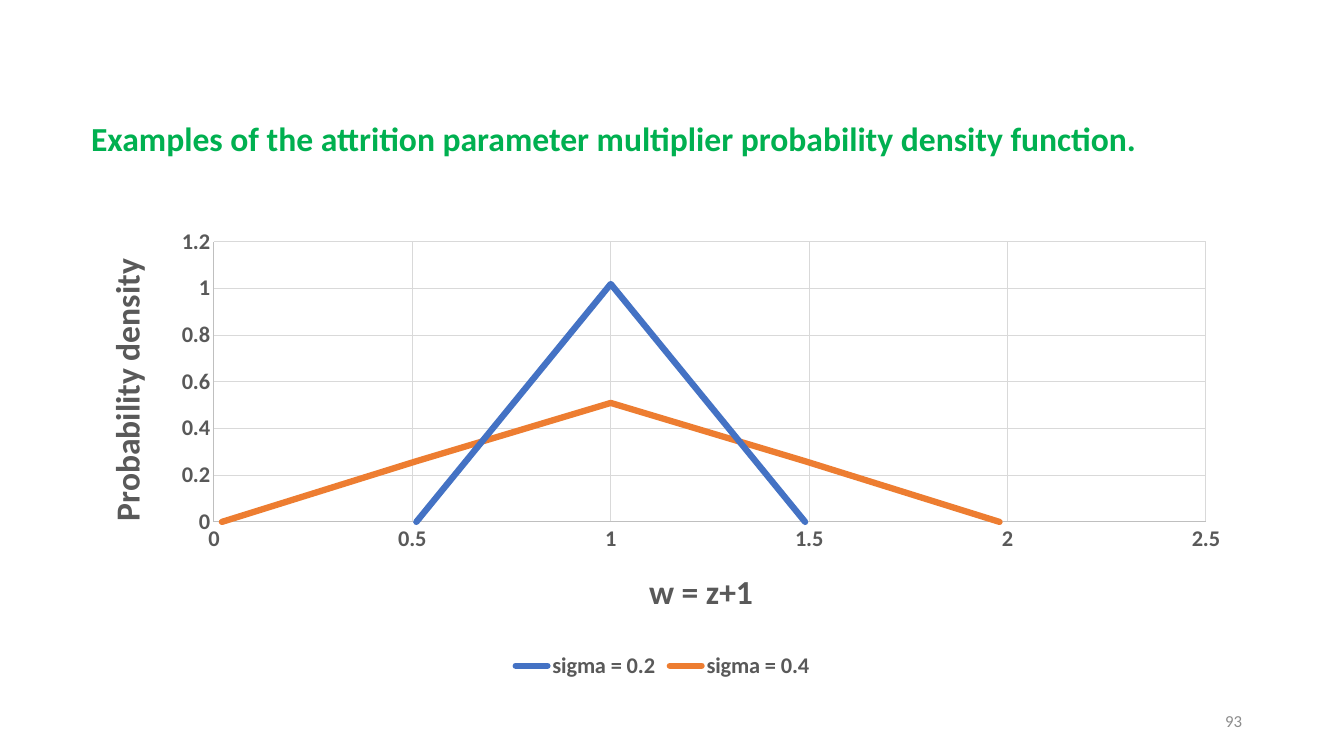
from lxml.etree import SubElement
from pptx import Presentation
from pptx.chart.data import XyChartData
from pptx.dml.color import RGBColor
from pptx.enum.chart import XL_CHART_TYPE, XL_LEGEND_POSITION, XL_TICK_MARK
from pptx.enum.text import MSO_ANCHOR, PP_ALIGN
from pptx.oxml.ns import qn
from pptx.util import Emu, Pt

GREEN = RGBColor(0x00, 0xB0, 0x50)
BLUE = RGBColor(0x44, 0x72, 0xC4)
ORANGE = RGBColor(0xED, 0x7D, 0x31)
TEXT_GRAY = RGBColor(0x59, 0x59, 0x59)
NUMBER_GRAY = RGBColor(0x8C, 0x8C, 0x8C)
AXIS_GRAY = RGBColor(0xBF, 0xBF, 0xBF)
GRID_GRAY = RGBColor(0xD9, 0xD9, 0xD9)

CHART_WIDTH, CHART_HEIGHT = 1163, 465
MULTIPLIERS = [0.02, 0.51, 1, 1.49, 1.98]
DENSITIES = [
    ("sigma = 0.2", BLUE, [None, 0, 1.02, 0, None]),
    ("sigma = 0.4", ORANGE, [0, 0.26, 0.51, 0.26, 0]),
]


def px(count):
    return Emu(round(count * 914400 / 100.8))


def place(holder, **lengths):
    """Give a chart part a manual layout, in px from the chart's corner."""
    for old in holder.findall(qn("c:layout")):
        holder.remove(old)
    layout = SubElement(holder, qn("c:layout"))
    manual = SubElement(layout, qn("c:manualLayout"))
    if "w" in lengths:
        SubElement(manual, qn("c:layoutTarget")).set("val", "inner")
    for side in ("x", "y"):
        SubElement(manual, qn(f"c:{side}Mode")).set("val", "edge")
    for side, length in lengths.items():
        whole = CHART_WIDTH if side in "xw" else CHART_HEIGHT
        SubElement(manual, qn(f"c:{side}")).set("val", str(length / whole))
    text = holder.find(qn("c:tx"))
    holder.insert(0 if text is None else 1, layout)


class SlideBuilder:
    font = "Calibri"

    def __init__(self, deck):
        self.page = deck.slides.add_slide(deck.slide_layouts[5])

    def style(self, font, size, color, bold=False):
        font.name = self.font
        font.size = Pt(size)
        font.bold = bold
        font.color.rgb = color

    def title(self, text, left, top, width, height):
        box = self.page.shapes.title
        box.left, box.top, box.width, box.height = map(px, (left, top, width, height))
        frame = box.text_frame
        frame.text = text
        frame.word_wrap = False
        frame.vertical_anchor = MSO_ANCHOR.TOP
        para = frame.paragraphs[0]
        para.alignment = PP_ALIGN.LEFT
        self.style(para.runs[0].font, 24, GREEN, True)

    def page_number(self, text, left, top, width, height):
        box = self.page.shapes.add_textbox(*map(px, (left, top, width, height)))
        frame = box.text_frame
        frame.text = text
        frame.word_wrap = True
        frame.vertical_anchor = MSO_ANCHOR.MIDDLE
        para = frame.paragraphs[0]
        para.alignment = PP_ALIGN.RIGHT
        self.style(para.runs[0].font, 12, NUMBER_GRAY)

    def axis(self, axis, text, maximum, step, rotation, x, y):
        axis.minimum_scale, axis.maximum_scale, axis.major_unit = 0, maximum, step
        axis.major_tick_mark = axis.minor_tick_mark = XL_TICK_MARK.NONE
        axis.has_major_gridlines = True
        for line, color in ((axis.format.line, AXIS_GRAY),
                            (axis.major_gridlines.format.line, GRID_GRAY)):
            line.color.rgb = color
            line.width = Pt(0.75)
        axis.tick_labels.number_format = "General"
        axis.tick_labels.number_format_is_linked = False
        self.style(axis.tick_labels.font, 16, TEXT_GRAY, True)
        frame = axis.axis_title.text_frame
        frame.text = text
        self.style(frame.paragraphs[0].runs[0].font, 24, TEXT_GRAY, True)
        title = axis.axis_title.element
        title.xpath(".//a:bodyPr")[0].set("rot", str(rotation * 60000))
        place(title, x=x, y=y)

    def density_chart(self, left, top):
        data = XyChartData()
        for name, _, values in DENSITIES:
            series = data.add_series(name)
            for multiplier, density in zip(MULTIPLIERS, values):
                series.add_data_point(multiplier, density)
        chart = self.page.shapes.add_chart(
            XL_CHART_TYPE.XY_SCATTER_LINES_NO_MARKERS,
            *map(px, (left, top, CHART_WIDTH, CHART_HEIGHT)), data).chart
        for gap in chart.element.xpath('.//c:yVal//c:pt[c:v="None"]'):
            gap.getparent().remove(gap)
        chart.has_title = False
        chart.font.name = self.font
        chart.font.size = Pt(10)
        plot = chart.plots[0]
        plot.vary_by_categories = False
        for series, (_, color, _) in zip(plot.series, DENSITIES):
            series.smooth = False
            series.format.line.color.rgb = color
            series.format.line.width = Pt(4.5)
        for line in chart.element.xpath(".//c:ser/c:spPr/a:ln"):
            line.set("cap", "rnd")
        self.axis(chart.category_axis, "w = z+1", 2.5, 0.5, 0, 562, 344)
        self.axis(chart.value_axis, "Probability density", 1.2, 0.2, -90, 17, 34)
        place(chart.element.xpath(".//c:plotArea")[0], x=133, y=23, w=992, h=280)
        chart.has_legend = True
        chart.legend.position = XL_LEGEND_POSITION.BOTTOM
        chart.legend.include_in_layout = False
        self.style(chart.legend.font, 16, TEXT_GRAY, True)


def main():
    deck = Presentation()
    deck.slide_width, deck.slide_height = px(1344), px(756)
    builder = SlideBuilder(deck)
    builder.title("Examples of the attrition parameter multiplier probability "
                  "density function.", 81, 113, 1078, 50)
    builder.density_chart(81, 219)
    builder.page_number("93", 950, 701, 302, 40)
    deck.save("out.pptx")


if __name__ == "__main__":
    main()
